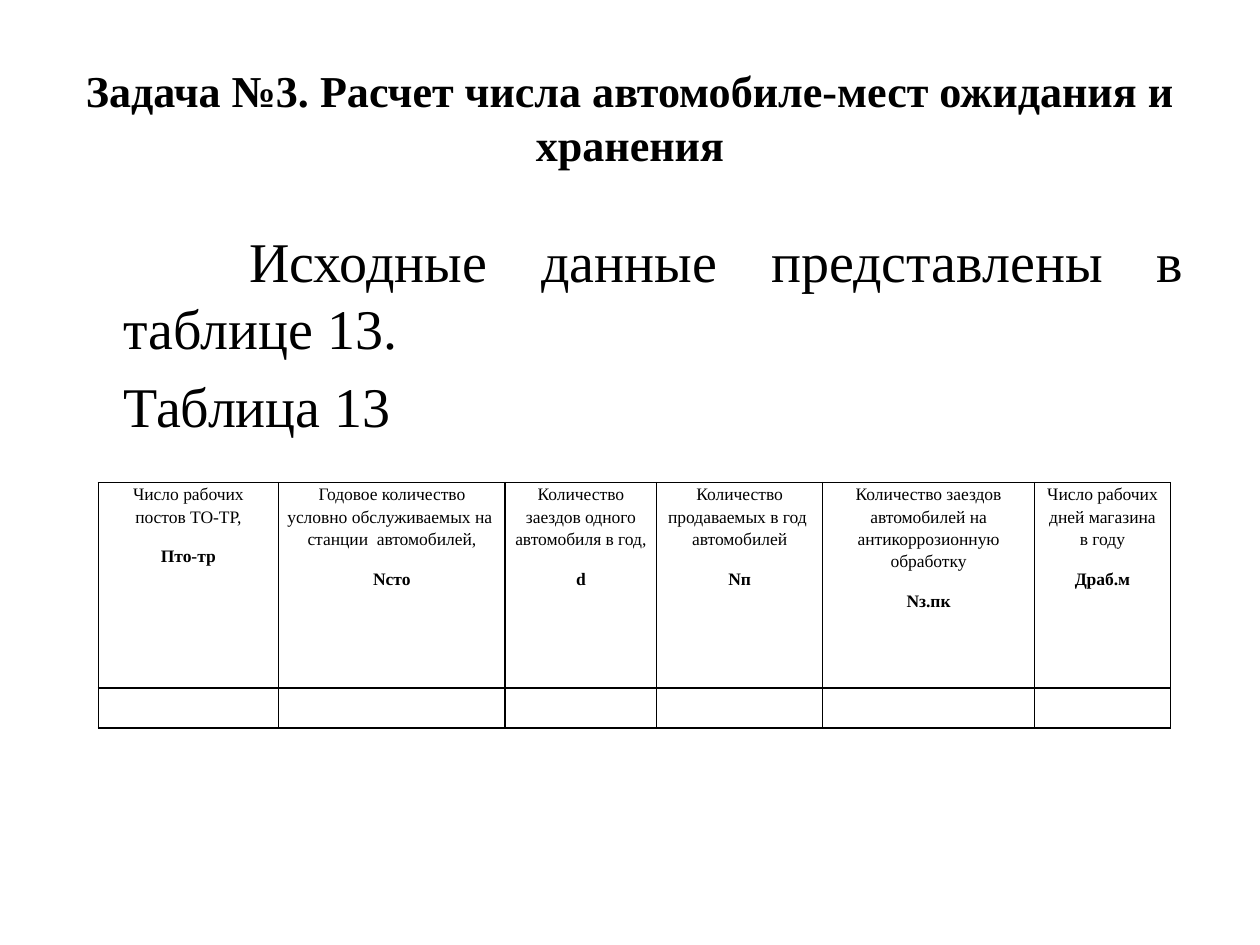
from lxml.etree import SubElement
from pptx import Presentation
from pptx.dml.color import RGBColor
from pptx.enum.text import MSO_ANCHOR, PP_ALIGN
from pptx.oxml.ns import qn
from pptx.util import Pt

PX = 9144
COLORS = {"text": "000000", "border": "000000", "background": "FFFFFF"}
FONT = "Times New Roman"
COLUMNS = [
    (143, "Число рабочих постов ТО-ТР,", "Пто-тр"),
    (180, "Годовое количество условно обслуживаемых на  станции  автомобилей,", "Ncтo"),
    (120, "Количество заездов одного автомобиля в год,", "d"),
    (132, "Количество продаваемых в год  автомобилей", "Nп"),
    (168, "Количество заездов автомобилей на антикоррозионную обработку", "Nз.пк"),
    (108, "Число рабочих дней магазина в году", "Драб.м"),
]
ROWS = [163, 32]


def px(*values):
    return [value * PX for value in values]


def format_paragraph(p, size, align, bold=False):
    p.alignment = align
    for r in p.runs:
        r.font.name = FONT
        r.font.size = Pt(size)
        r.font.bold = bold
        r.font.color.rgb = RGBColor.from_string(COLORS["text"])


def add_text_frame(s, box):
    tf = s.shapes.add_textbox(*px(*box)).text_frame
    tf.word_wrap = True
    return tf


def add_title(s, box):
    tf = add_text_frame(s, box)
    tf.vertical_anchor = MSO_ANCHOR.MIDDLE
    tf.text = "Задача №3. Расчет числа автомобиле-мест ожидания и хранения"
    p = tf.paragraphs[0]
    p.line_spacing = Pt(30.5)
    format_paragraph(p, 25.2, PP_ALIGN.CENTER, True)


def add_body(s, box):
    tf = add_text_frame(s, box)
    tf.text = "Исходные данные представлены в таблице 13.\nТаблица 13"
    for p, indent in zip(tf.paragraphs, (100, 0)):
        format_paragraph(p, 32, PP_ALIGN.JUSTIFY)
        p.line_spacing = Pt(38.3)
        p.space_before = Pt(6.4)
        pPr = p._p.get_or_add_pPr()
        pPr.set("marL", str(38 * PX))
        pPr.set("indent", str(indent * PX))


def add_borders(cell):
    tcPr = cell._tc.get_or_add_tcPr()
    for side in ("a:lnL", "a:lnR", "a:lnT", "a:lnB"):
        ln = SubElement(tcPr, qn(side), w=str(Pt(1)))
        fill = SubElement(ln, qn("a:solidFill"))
        SubElement(fill, qn("a:srgbClr"), val=COLORS["border"])


def add_data_table(s, left, top):
    widths = [width for width, _, _ in COLUMNS]
    size = px(left, top, sum(widths), sum(ROWS))
    table = s.shapes.add_table(len(ROWS), len(COLUMNS), *size).table
    table.first_row = table.horz_banding = False
    for row, height in zip(table.rows, px(*ROWS)):
        row.height = height
    for column, width in zip(table.columns, px(*widths)):
        column.width = width
    for cell in table.iter_cells():
        cell.margin_left = cell.margin_right = 7 * PX
        cell.margin_top = cell.margin_bottom = 0
        add_borders(cell)
        cell.fill.background()
    for i, (_, label, symbol) in enumerate(COLUMNS):
        tf = table.cell(0, i).text_frame
        tf.text = f"{label}\n{symbol}"
        for p, bold in zip(tf.paragraphs, (False, True)):
            format_paragraph(p, 10, PP_ALIGN.CENTER, bold)
            p.line_spacing = 1.15
            p.space_after = Pt(10)


def main():
    prs = Presentation()
    prs.slide_width, prs.slide_height = px(1000, 750)
    s = prs.slides.add_slide(prs.slide_layouts[6])
    s.background.fill.solid()
    s.background.fill.fore_color.rgb = RGBColor.from_string(COLORS["background"])
    add_title(s, (50, 30, 900, 125))
    add_body(s, (50, 175, 900, 495))
    add_data_table(s, 78, 383)
    prs.save("out.pptx")


if __name__ == "__main__":
    main()
